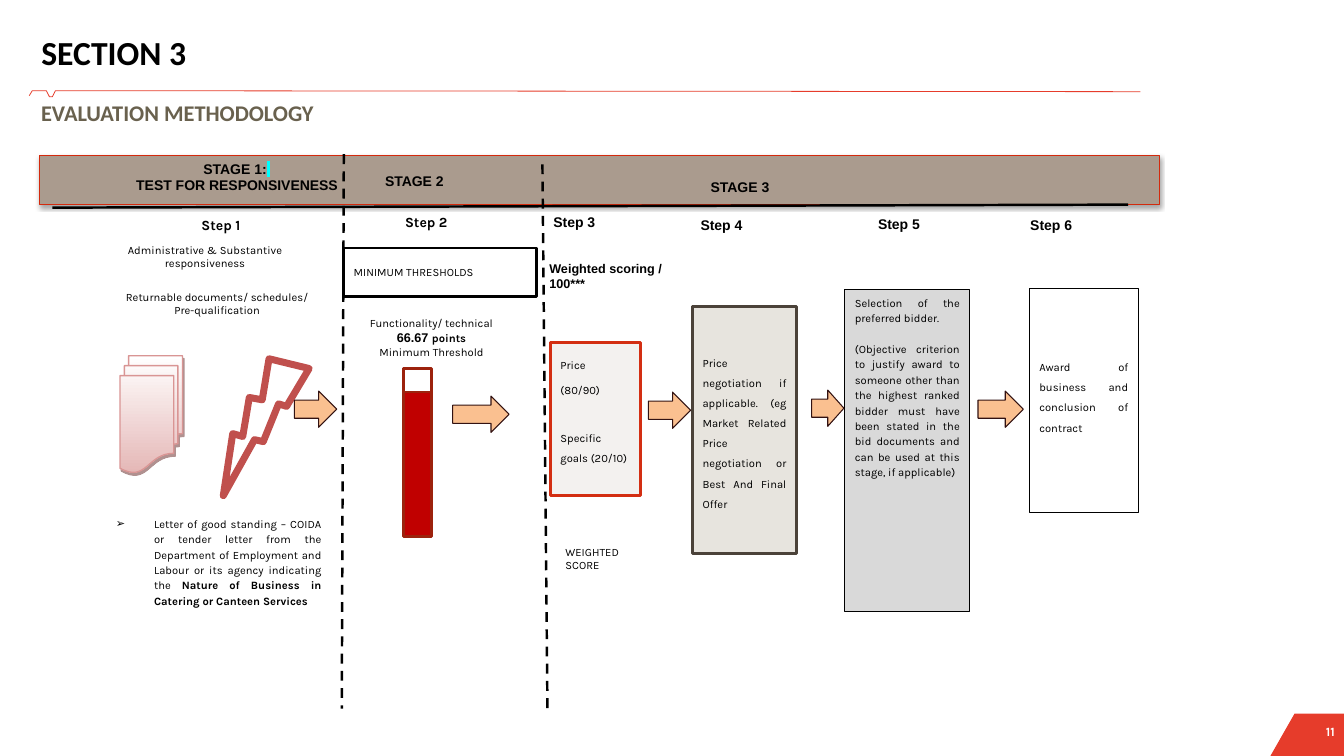
from lxml import etree
from pptx import Presentation
from pptx import util as u
from pptx.dml.color import RGBColor
from pptx.enum import dml, shapes, text
from pptx.oxml.ns import qn

PX = 9144  # 100 px to the inch
BLACK, WHITE = RGBColor(0, 0, 0), RGBColor(255, 255, 255)
RED, CORAL = RGBColor(0xE6, 0x3C, 0x2B), RGBColor(0xD3, 0x2A, 0x0D)
BRICK, BLOOD = RGBColor(0x9C, 0x22, 0x0D), RGBColor(0xC0, 0, 0)
BOLT, PINK, ROSE = RGBColor(0xC0, 0x50, 0x4D), RGBColor(0xE5, 0xB8, 0xB7), RGBColor(0xD9, 0x95, 0x94)
PEACH, MAROON = RGBColor(0xFA, 0xC0, 0x90), RGBColor(0x32, 0x12, 0x12)
TAUPE, OLIVE = RGBColor(0xAA, 0x9B, 0x8E), RGBColor(0x69, 0x61, 0x4E)
GREY, PALE = RGBColor(0xD9, 0xD9, 0xD9), RGBColor(0xF3, 0xF1, 0xEF)
SAND, UMBER = RGBColor(0xE7, 0xE4, 0xDE), RGBColor(0x4B, 0x42, 0x39)
L, C, R, J = (text.PP_ALIGN.LEFT, text.PP_ALIGN.CENTER, text.PP_ALIGN.RIGHT, text.PP_ALIGN.JUSTIFY)
TOP, MIDDLE = text.MSO_ANCHOR.TOP, text.MSO_ANCHOR.MIDDLE
SHAPE = shapes.MSO_SHAPE
INSETS = (10, 5, 10, 5)

# Run styles: font, size, bold, colour
TITLE = ("Calibri", 24, True, BLACK)
SUBTITLE = ("Calibri", 16, True, OLIVE)
NUMBER = ("Karla", 9, True, WHITE)
HEAD, HEAD_K = ("Arial", 10, True, BLACK), ("Karla", 10, True, BLACK)
SCORE = ("Arial", 9, True, BLACK)
BODY, BODY_B = ("Karla", 8, False, BLACK), ("Karla", 8, True, BLACK)

# Labels: box, paragraphs of (text, style) runs, alignment, insets
LABELS = [
    ((119, 149, 232, 53), [[("STAGE 1:", HEAD), (" ", HEAD)], [("TEST FOR RESPONSIVENESS", HEAD)]], C, INSETS),
    ((372, 158, 111, 43), [[("STAGE 2", HEAD)]], L, INSETS),
    ((695, 164, 133, 43), [[("STAGE 3", HEAD)]], L, INSETS),
    ((190, 202, 101, 43), [[("Step 1", HEAD_K)]], L, INSETS),
    ((392, 199, 87, 43), [[("Step 2", HEAD_K)]], L, INSETS),
    ((539, 199, 91, 43), [[("Step 3", HEAD)]], L, INSETS),
    ((685, 202, 93, 43), [[("Step 4", HEAD)]], L, INSETS),
    ((861, 201, 91, 43), [[("Step 5", HEAD)]], L, INSETS),
    ((1012, 202, 94, 43), [[("Step 6", HEAD)]], L, INSETS),
    ((100, 230, 207, 49), [[("Administrative & Substantive responsiveness", BODY)]], C, INSETS),
    ((108, 283, 215, 49), [[("Returnable documents/ schedules/ Pre-qualification", BODY)]], C, (10, 5, 10, 18)),
    ((339, 304, 178, 62), [[("Functionality/ technical", BODY)],
                           [("66.67 ", SCORE), ("points", BODY_B)],
                           [("Minimum Threshold", BODY)]], C, INSETS),
    ((535, 244, 152, 60), [[("Weighted scoring / 100***", SCORE)]], L, INSETS),
    ((551, 509, 103, 90), [[("WEIGHTED SCORE", BODY)]], L, INSETS),
]
LETTER = [("Letter of good standing – COIDA or tender letter from the Department of Employment "
           "and Labour or its agency indicating the ", BODY),
          ("Nature of Business in Catering or Canteen Services", BODY_B)]

# Boxes: box, fill, line, line width, paragraphs, alignment, line spacing, gaps before, anchor, insets
BOXES = [
    ((341, 246, 191, 48), None, BLACK, 2, ["MINIMUM THRESHOLDS"], L, 1, [0], MIDDLE, INSETS),
    ((546, 340, 89, 152), PALE, RGBColor(0xD3, 0x2E, 0x12), 2,
     ["Price", "(80/90)", "Specific goals (20/10)"], L, 1.5, [0, 3, 20], TOP, (10, 9, 10, 5)),
    ((687, 304, 103, 245), SAND, UMBER, 2,
     ["Price negotiation if applicable. (eg Market Related Price negotiation or Best And Final Offer"],
     J, 1.5, [0], MIDDLE, INSETS),
    ((838, 287, 124, 320), GREY, BLACK, 0.75,
     ["Selection of the preferred bidder.",
      "(Objective criterion to justify award to someone other than the highest ranked bidder must have "
      "been stated in the bid documents and can be used at this stage, if applicable)"],
     J, 1.15, [0, 11], TOP, INSETS),
    ((1021, 286, 108, 222), WHITE, BLACK, 0.75,
     ["Award of business and conclusion of contract"], J, 1.5, [0], TOP, (10, 65, 10, 5)),
]
ARROWS = [(292, 388, 42), (449, 393, 56), (643, 389, 42), (805, 387, 32), (970, 388, 45)]  # left, top, width
RULES = [((52, 206), (1119, 203), False), ((341, 153), (339, 703), True), ((538, 163), (543, 706), True)]
CORNER = [(1284, 708), (1333, 708), (1333, 750), (1260, 750)]
PULSE = [(1131, 91), (55, 90), (52, 96), (49, 96), (46, 90), (32, 90), (29, 95)]

deck = Presentation()
deck.slide_width, deck.slide_height = 1333 * PX, 750 * PX
page = deck.slides.add_slide(deck.slide_layouts[5])


def px(values):
    return [v * PX for v in values]


def paint(shape, fill=None, line=None, width=1):
    shape.shadow.inherit = False
    if fill is None:
        shape.fill.background()
    else:
        shape.fill.solid()
        shape.fill.fore_color.rgb = fill
    if line is None:
        shape.line.fill.background()
    else:
        shape.line.color.rgb = line
        shape.line.width = u.Pt(width)
    return shape


def add_box(kind, box, *look):
    return paint(page.shapes.add_shape(kind, *px(box)), *look)


def add_outline(points, closed, *look):
    builder = page.shapes.build_freeform(*points[0], scale=PX)
    builder.add_line_segments(points[1:], close=closed)
    return paint(builder.convert_to_shape(), *look)


def write(shape, paras, align=L, anchor=MIDDLE, insets=INSETS, spacing=1, gaps=None):
    frame = shape.text_frame
    frame.word_wrap, frame.vertical_anchor = True, anchor
    frame.margin_left, frame.margin_top, frame.margin_right, frame.margin_bottom = px(insets)
    for i, runs in enumerate(paras):
        para = frame.paragraphs[0] if i == 0 else frame.add_paragraph()
        para.alignment, para.line_spacing = align, spacing
        para.space_before = u.Pt(gaps[i] if gaps else 0)
        for words, (name, size, bold, colour) in runs:
            span = para.add_run()
            span.text = words
            font = span.font
            font.name, font.size, font.bold = name, u.Pt(size), bold
            font.color.rgb = colour
    return frame


def add_label(box, *args, **options):
    return write(page.shapes.add_textbox(*px(box)), *args, **options)


def add_shadow(shape, colour, alpha, blur, dist, angle):
    effects = shape._element.spPr.find(qn("a:effectLst"))
    outer = etree.SubElement(effects, qn("a:outerShdw"), blurRad=str(u.Pt(blur)), dist=str(u.Pt(dist)),
                             dir=str(angle * 60000), algn="tl", rotWithShape="0")
    tint = etree.SubElement(outer, qn("a:srgbClr"), val=colour)
    etree.SubElement(tint, qn("a:alpha"), val=str(alpha * 1000))


# Page corner, header pulse line and titles
add_outline(CORNER, True, RED)
add_label((1267, 715, 57, 23), [[("11", NUMBER)]], R, text.MSO_ANCHOR.BOTTOM, (0, 0, 0, 5))
add_outline(PULSE, False, None, RED, 0.56)
title = page.shapes.title
title.left, title.top, title.width, title.height = px((31, 32, 1102, 40))
write(title, [[("SECTION 3", TITLE)]])
add_label((31, 91, 644, 39), [[("EVALUATION METHODOLOGY", SUBTITLE)]], anchor=TOP, spacing=1.1)

# Stage band
band = add_box(SHAPE.RECTANGLE, (39, 154, 1111, 49), TAUPE, CORAL, 0.75)
add_shadow(band, "000000", 35, 3.1, 1.8, 90)

# Documents and lightning bolt
papers = add_box(SHAPE.FLOWCHART_MULTIDOCUMENT, (119, 353, 62, 116), WHITE, ROSE, 1)
papers.fill.gradient()
papers.fill.gradient_angle = 270
for stop, place, colour in zip(papers.fill.gradient_stops, (0, 1), (WHITE, PINK)):
    stop.position, stop.color.rgb = place, colour
add_shadow(papers, "622423", 50, 0, 2.2, 63)
add_box(SHAPE.LIGHTNING_BOLT, (214, 344, 81, 144), WHITE, BOLT, 5).rotation = 52.9

# Threshold gauge
add_box(SHAPE.RECTANGLE, (400, 389, 28, 143), BLOOD, BRICK, 2)
add_box(SHAPE.RECTANGLE, (400, 366, 28, 23), None, BRICK, 2)

# Step boxes and arrows
for box, fill, line, width, lines, align, spacing, gaps, anchor, insets in BOXES:
    write(add_box(SHAPE.RECTANGLE, box, fill, line, width), [[(words, BODY)] for words in lines],
          align, anchor, insets, spacing, gaps)
for left, top, width in ARROWS:
    add_box(SHAPE.RIGHT_ARROW, (left, top, width, 36), PEACH, MAROON, 0.75)

# Labels, with the marker after the first stage name
frames = [add_label(box, paras, align, insets=insets) for box, paras, align, insets in LABELS]
marker = frames[0].paragraphs[0].runs[1].font._element.find(qn("a:solidFill"))
highlight = etree.Element(qn("a:highlight"))
etree.SubElement(highlight, qn("a:srgbClr"), val="00FFFF")
marker.addnext(highlight)

# Bulleted letter requirement
letter = add_label((105, 497, 224, 116), [LETTER], J, insets=(10, 13, 10, 9), spacing=1.15)
props = letter.paragraphs[0]._p.get_or_add_pPr()
props.set("marL", str(38 * PX))
props.set("indent", str(-38 * PX))
etree.SubElement(props, qn("a:buFont"), typeface="Arial")
etree.SubElement(props, qn("a:buChar"), char="➢")

# Stage dividers and band underline
for start, end, dashed in RULES:
    rule = page.shapes.add_connector(shapes.MSO_CONNECTOR.STRAIGHT, *px(start + end))
    rule.line.color.rgb, rule.line.width = BLACK, u.Pt(1.75)
    if dashed:
        rule.line.dash_style = dml.MSO_LINE.DASH
    etree.SubElement(rule._element.spPr, qn("a:effectLst"))

deck.save("out.pptx")
